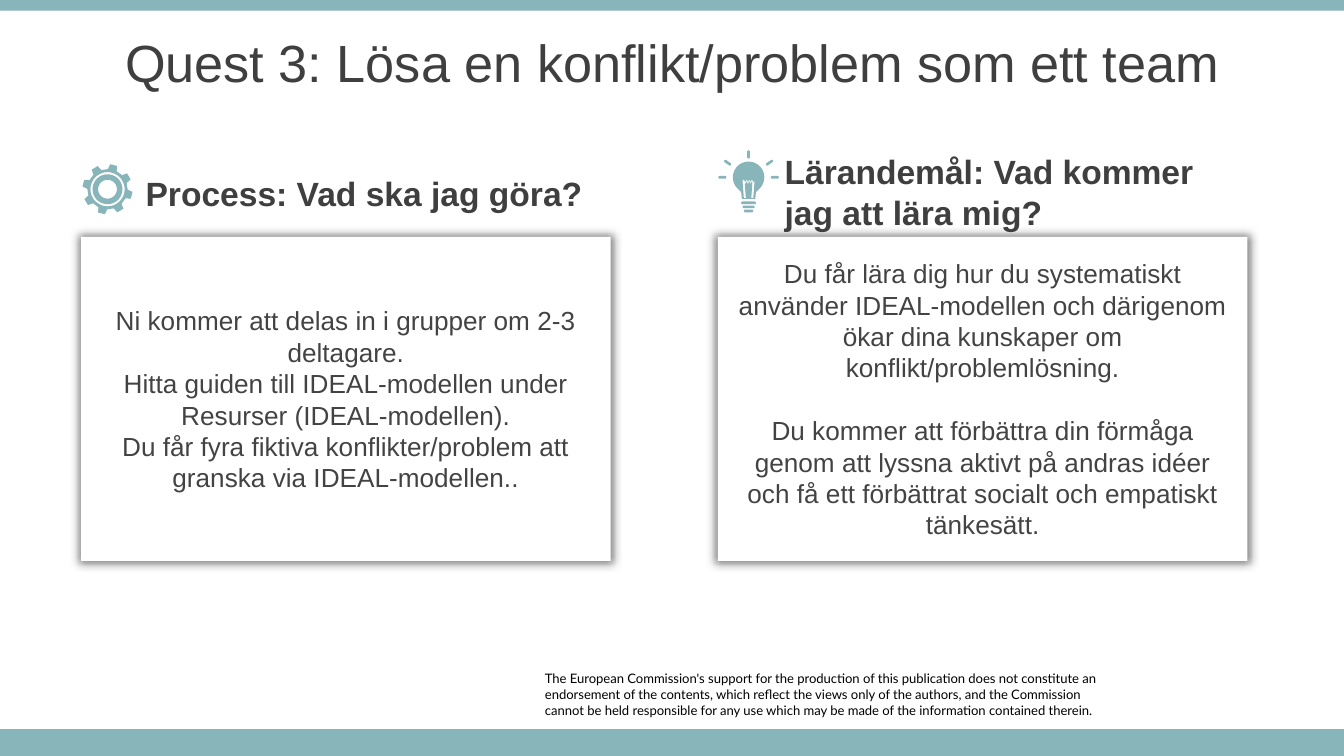
from math import cos, sin, radians
from lxml.etree import SubElement
from pptx import Presentation
from pptx.dml.color import RGBColor
from pptx.enum.shapes import MSO_SHAPE
from pptx.enum.text import MSO_ANCHOR, PP_ALIGN
from pptx.oxml.ns import qn
from pptx.util import Inches, Pt

HUES = {"teal": "87B5BA", "white": "FFFFFF", "dark": "3F3F3F",
        "body": "434343", "black": "000000"}
COLS, ROWS = 100, 56.25


def hue(name):
    return RGBColor.from_string(HUES[name])


def write(frame, lines, size=14, font="Arial", color="body", bold=False,
          align=PP_ALIGN.LEFT, anchor=MSO_ANCHOR.MIDDLE, inset=True, gap=0):
    frame.word_wrap = True
    frame.vertical_anchor = anchor
    across, down = (Inches(0.1), Inches(0.05)) if inset else (0, 0)
    frame.margin_left = frame.margin_right = across
    frame.margin_top = frame.margin_bottom = down
    for i, line in enumerate(lines):
        para = frame.add_paragraph() if i else frame.paragraphs[0]
        para.alignment = align
        if i and gap:
            para.space_before = Pt(gap)
        run = para.add_run()
        run.text = line
        run.font.size = Pt(size)
        run.font.name = font
        run.font.bold = bold
        run.font.color.rgb = hue(color)


def arc(x, y, r, start, end, step=6):
    return [(x + r * cos(radians(a)), y + r * sin(radians(a)))
            for a in range(start, end + 1, step)]


def pill(x, y, wide, turn=0, r=0.1):
    dx, dy = arc(0, 0, wide / 2 - r, turn, turn)[0]
    return (arc(x + dx, y + dy, r, turn - 90, turn + 90, 15)
            + arc(x - dx, y - dy, r, turn + 90, turn + 270, 15))


class Deck:
    """Hold the style and the current slide, measured on a grid of 100 columns."""

    def __init__(self):
        self.file = Presentation()
        self.file.slide_width = Inches(10)
        self.file.slide_height = Inches(5.625)
        self.unit = self.file.slide_width / COLS
        self.slide = self.file.slides.add_slide(self.file.slide_layouts[6])
        self.shapes = self.slide.shapes

    def grid(self, *spans):
        return [round(s * self.unit) for s in spans]

    def paint(self, shape, color):
        shape.shadow.inherit = False
        shape.fill.solid()
        shape.fill.fore_color.rgb = hue(color)
        shape.line.fill.background()
        return shape

    def block(self, x, y, w, h, color="teal"):
        shape = self.shapes.add_shape(MSO_SHAPE.RECTANGLE,
                                      *self.grid(x, y, w, h))
        return self.paint(shape, color)

    def text(self, x, y, w, h, lines, **style):
        box = self.shapes.add_textbox(*self.grid(x, y, w, h))
        write(box.text_frame, lines, **style)

    def card(self, x, y, w, h, lines, **style):
        card = self.block(x, y, w, h, "white")
        glow = card._element.spPr.find(qn("a:effectLst"))
        shade = SubElement(glow, qn("a:outerShdw"), blurRad=str(Pt(5)),
                           sx="101000", sy="101500",
                           algn="ctr", rotWithShape="0")
        tint = SubElement(shade, qn("a:srgbClr"), val=HUES["black"])
        SubElement(tint, qn("a:alpha"), val="50000")
        write(card.text_frame, lines, align=PP_ALIGN.CENTER, **style)

    def trace(self, *loops):
        loops = [[self.grid(*dot) for dot in loop] for loop in loops]
        pen = self.shapes.build_freeform(*loops[0][0])
        for i, loop in enumerate(loops):
            if i:
                pen.move_to(*loop[0])
            pen.add_line_segments(loop[1:], close=True)
        self.paint(pen.convert_to_shape(), "teal")

    def gear(self, x, y):
        teeth = []
        for mid in range(-76, 284, 45):
            for r, turn in ((1.5, -13), (1.87, -8), (1.87, 8), (1.5, 13)):
                teeth += arc(x, y, r, mid + turn, mid + turn)
        rings = [arc(x, y, r, 0, 354) for r in (1.27, 1.11, 0.7)]
        self.trace(teeth, *rings)

    def bulb(self, x, y):
        rays = [pill(*arc(x, y, far, turn, turn)[0], 0.6, turn)
                for turn, far in ((0, 1.95), (-35, 1.9), (-90, 1.7),
                                  (-145, 1.9), (-180, 1.95))]
        base = [pill(x, y + 1.9 + 0.3 * i, wide)
                for i, wide in enumerate((1.1, 0.9, 0.7))]
        glass = arc(x, y, 1.17, 135, 405) + [
            (x + 0.55, y + 1.1), (x + 0.5, y + 1.6),
            (x - 0.5, y + 1.6), (x - 0.55, y + 1.1)]
        coil = [(x - 0.35 + 0.1 * i, y + 0.15 + 0.2 * (i % 2))
                for i in range(8)]
        wire = [(x - 0.35, y + 1.55), (x - 0.45, y + 0.25), *coil,
                (x + 0.45, y + 0.25), (x + 0.35, y + 1.55),
                (x + 0.2, y + 1.55), (x + 0.28, y + 0.45),
                *[(a, b + 0.15) for a, b in coil[-2:0:-1]],
                (x - 0.28, y + 0.45), (x - 0.2, y + 1.55)]
        self.trace(glass, wire, *rays, *base)


def main():
    deck = Deck()
    deck.text(40.55, 49.9, 41.7, 3.5, [
        "The European Commission's support for the production of this publication "
        "does not constitute an endorsement of the contents, which reflect the "
        "views only of the authors, and the Commission",
        "cannot be held responsible for any use which may be made of the "
        "information contained therein."],
        size=7, font="Lato", color="black", anchor=MSO_ANCHOR.TOP, inset=False)
    deck.block(0, ROWS - 2, COLS, 2)
    deck.block(0, 0, COLS, 0.8)
    deck.text(0, 1.4, COLS, 6.3, ["Quest 3: Lösa en konflikt/problem som ett team"],
              size=28, color="dark", align=PP_ALIGN.CENTER)
    deck.gear(8, 14.08)
    deck.bulb(55.7, 13.2)
    panels = (
        (6.03, 9.85, 12.8, "Process: Vad ska jag göra?", 0, [
            "Ni kommer att delas in i grupper om 2-3 deltagare.",
            "Hitta guiden till IDEAL-modellen under Resurser (IDEAL-modellen).",
            "Du får fyra fiktiva konflikter/problem att granska via "
            "IDEAL-modellen.."]),
        (53.42, 57.4, 12.7, "Lärandemål: Vad kommer jag att lära mig?", 16.8, [
            "Du får lära dig hur du systematiskt använder IDEAL-modellen och "
            "därigenom ökar dina kunskaper om konflikt/problemlösning.",
            "Du kommer att förbättra din förmåga genom att lyssna aktivt på "
            "andras idéer och få ett förbättrat socialt och empatiskt "
            "tänkesätt."]))
    for left, start, top, head, gap, lines in panels:
        deck.card(left, 17.63, 39.4, 24.1, lines, gap=gap)
        deck.text(start, top, 35.6, 3.1, [head], size=18, color="dark", bold=True)
    deck.file.save("out.pptx")


if __name__ == "__main__":
    main()
